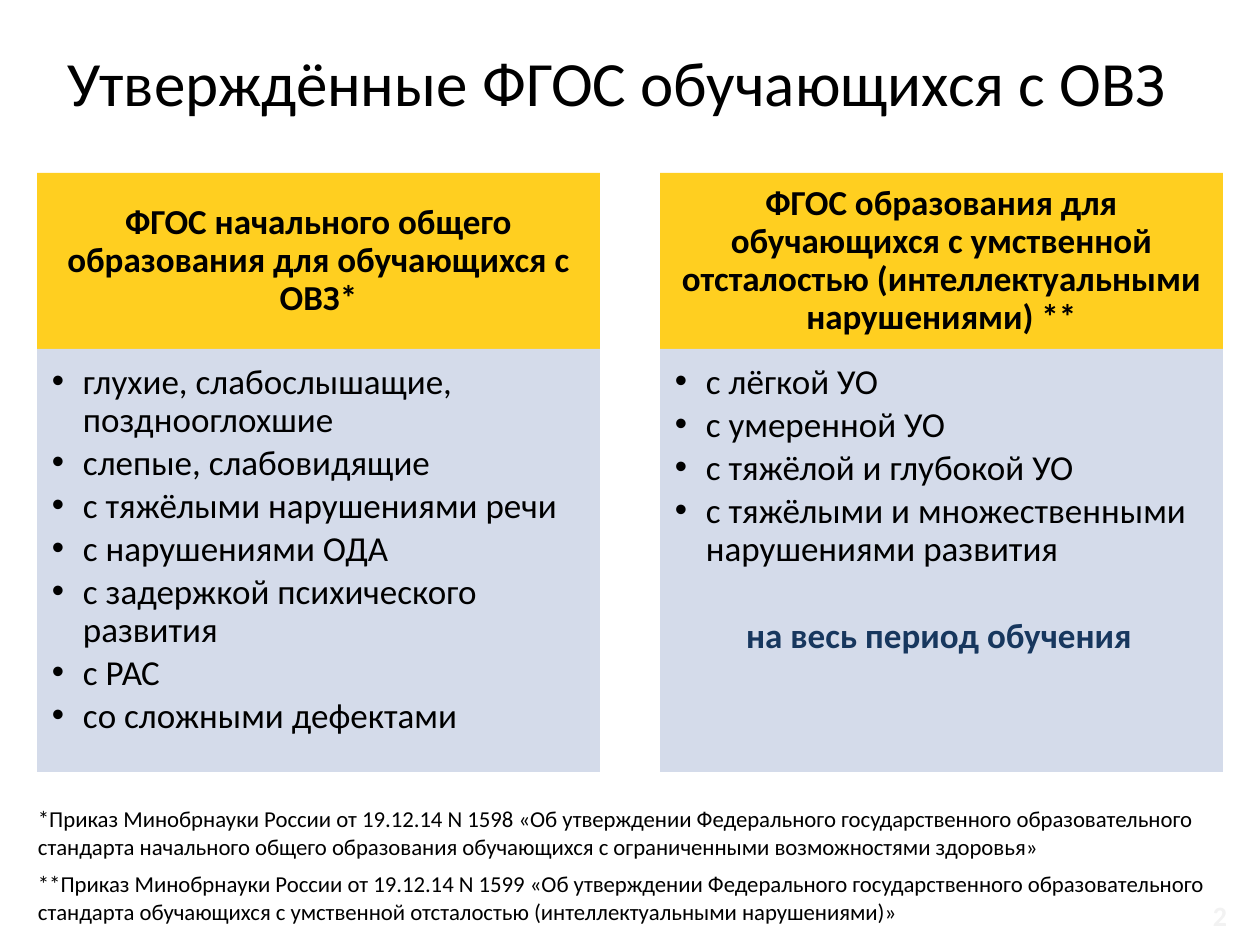
from lxml import etree
from pptx import Presentation
from pptx import util as u
from pptx.dml.color import RGBColor
from pptx.enum import text
from pptx.oxml.ns import qn

PX = 914400 // 126
BLACK = RGBColor(0x00, 0x00, 0x00)
NAVY = RGBColor(0x17, 0x37, 0x5E)
YELLOW = RGBColor(0xFF, 0xCF, 0x20)
PALE_BLUE = RGBColor(0xD0, 0xD8, 0xE8)
PALE_GREY = RGBColor(0xF2, 0xF2, 0xF2)

LEFT, RIGHT = text.PP_ALIGN.LEFT, text.PP_ALIGN.RIGHT
CENTER = text.PP_ALIGN.CENTER
TOP, MIDDLE = text.MSO_ANCHOR.TOP, text.MSO_ANCHOR.MIDDLE

COLUMNS = [
    ("ФГОС начального общего образования для обучающихся с ОВЗ*",
     ["глухие, слабослышащие, позднооглохшие",
      "слепые, слабовидящие",
      "с тяжёлыми нарушениями речи",
      "с нарушениями ОДА",
      "с задержкой психического развития",
      "с РАС",
      "со сложными дефектами"],
     None),
    ("ФГОС образования для обучающихся с умственной отсталостью "
     "(интеллектуальными нарушениями) **",
     ["с лёгкой УО",
      "с умеренной УО",
      "с тяжёлой и глубокой УО",
      "с тяжёлыми и множественными нарушениями развития"],
     "на весь период обучения"),
]
FOOTNOTES = [
    "*Приказ Минобрнауки России от 19.12.14 N 1598 «Об утверждении "
    "Федерального государственного образовательного стандарта начального "
    "общего образования обучающихся с ограниченными возможностями здоровья»",
    "**Приказ Минобрнауки России от 19.12.14 N 1599 «Об утверждении "
    "Федерального государственного образовательного стандарта обучающихся "
    "с умственной отсталостью (интеллектуальными нарушениями)»",
]


def place(sp, x, y, w, h, insets=(13, 6, 13, 6), anchor=TOP):
    """Move a shape to its box and prepare its text frame."""
    sp.left, sp.top, sp.width, sp.height = (v * PX for v in (x, y, w, h))
    tf = sp.text_frame
    tf.word_wrap = True
    tf.auto_size = text.MSO_AUTO_SIZE.NONE
    tf.vertical_anchor = anchor
    (tf.margin_left, tf.margin_top,
     tf.margin_right, tf.margin_bottom) = (v * PX for v in insets)
    return tf


def add_text(tf, words, size=20, color=BLACK, bold=False, align=LEFT,
             line=1.0, before=0, after=0, indent=0, bullet=False):
    p = tf.paragraphs[0]
    if p.runs:
        p = tf.add_paragraph()
    p.alignment, p.line_spacing = align, line
    p.space_before, p.space_after = u.Pt(before), u.Pt(after)
    pPr = p._p.get_or_add_pPr()
    pPr.set("marL", str(indent * PX))
    pPr.set("indent", str(-indent * PX))
    if bullet:
        etree.SubElement(pPr, qn("a:buFont")).set("typeface", "Arial")
        etree.SubElement(pPr, qn("a:buChar")).set("char", "•")
    else:
        etree.SubElement(pPr, qn("a:buNone"))
    r = p.add_run()
    r.text = words
    r.font.name, r.font.size, r.font.bold = "Calibri", u.Pt(size), bold
    r.font.color.rgb = color


def fill(sp, color, opacity=100):
    sp.fill.solid()
    sp.fill.fore_color.rgb = color
    if opacity < 100:
        clr = sp._element.spPr.find(".//" + qn("a:srgbClr"))
        etree.SubElement(clr, qn("a:alpha")).set("val", str(opacity * 1000))


def add_column(head, body, x, y, w, h, content):
    heading, items, closing = content
    head_h = 176
    tf = place(head, x, y, w, head_h, (20, 11, 20, 11), MIDDLE)
    fill(head, YELLOW)
    add_text(tf, heading, bold=True, align=CENTER, line=0.9)

    tf = place(body, x, y + head_h, w, h - head_h, (15, 15, 20, 21))
    fill(body, PALE_BLUE, 90)
    for item in items:
        add_text(tf, item, line=0.9, after=3, indent=31, bullet=True)
    if closing:
        add_text(tf, closing, color=NAVY, bold=True, align=CENTER,
                 line=0.9, before=25, after=3)


def add_footnotes(s, x, y, w, h):
    tf = place(s.shapes.add_textbox(0, 0, 0, 0), x, y, w, h)
    for note in FOOTNOTES:
        add_text(tf, note, size=13, after=6)


def add_page_number(s, x, y, w, h):
    tf = place(s.shapes.add_textbox(0, 0, 0, 0), x, y, w, h,
               (0, 0, 0, 0), MIDDLE)
    add_text(tf, "2", size=16, color=PALE_GREY, bold=True, align=RIGHT)


def main():
    prs = Presentation()
    prs.slide_width, prs.slide_height = u.Inches(10), u.Inches(7.5)
    s = prs.slides.add_slide(prs.slide_layouts.get_by_name("Comparison"))
    title, *parts = s.placeholders

    tf = place(title, 54, 37, 1206, 89, anchor=MIDDLE)
    add_text(tf, "Утверждённые ФГОС обучающихся с ОВЗ", size=36)

    width, gap = 563, 60
    for i, content in enumerate(COLUMNS):
        head, body = parts[2 * i:2 * i + 2]
        add_column(head, body, 37 + i * (width + gap), 173, width, 599, content)

    add_footnotes(s, 25, 799, 1225, 134)
    add_page_number(s, 1187, 898, 40, 34)
    prs.save("out.pptx")


if __name__ == "__main__":
    main()
